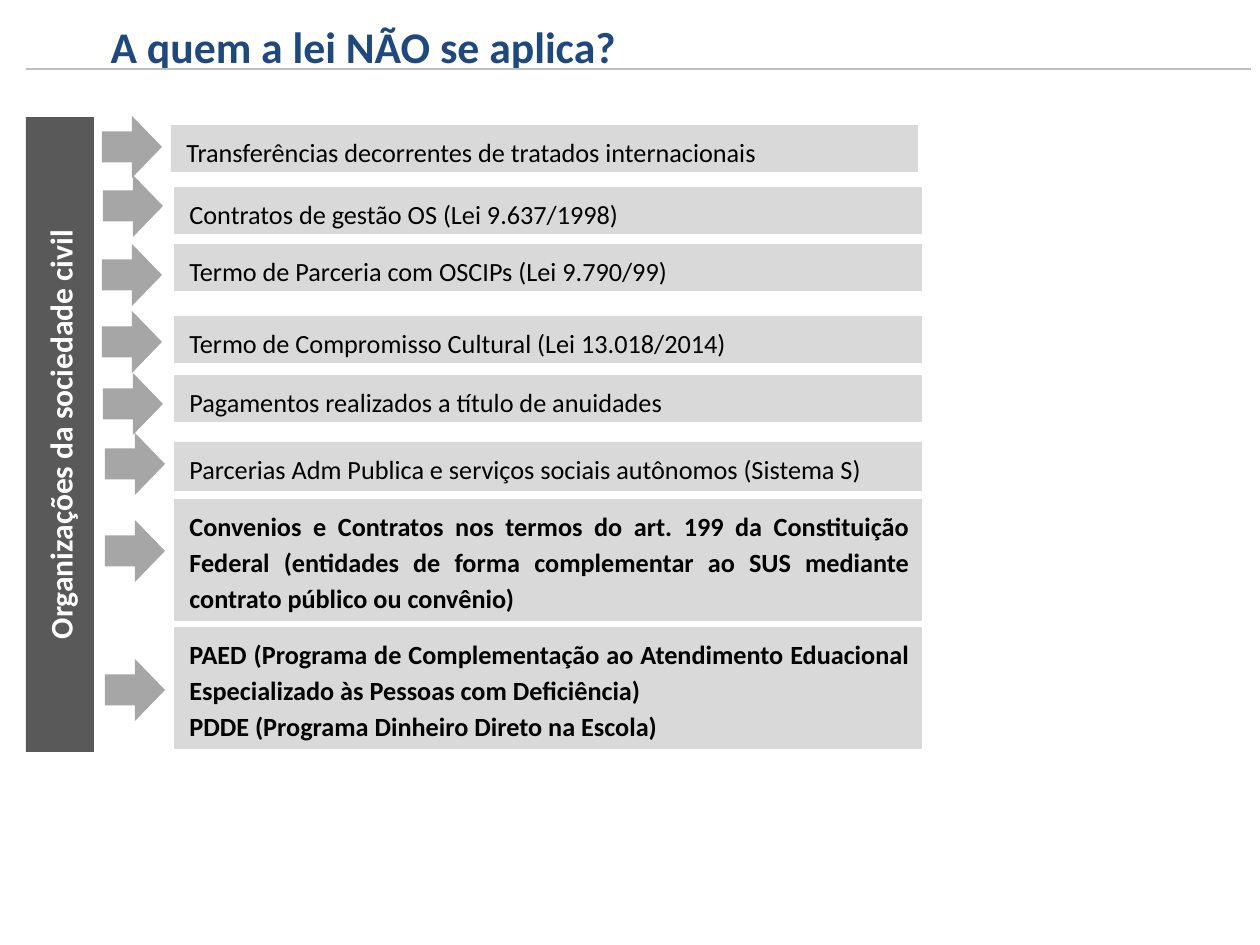
from lxml.etree import SubElement
from pptx import Presentation
from pptx.dml.color import RGBColor
from pptx.enum.shapes import MSO_CONNECTOR, MSO_SHAPE
from pptx.enum.text import MSO_ANCHOR, MSO_AUTO_SIZE, PP_ALIGN
from pptx.oxml.ns import qn
from pptx.util import Emu, Pt

NAVY = RGBColor(0x1F, 0x49, 0x7D)
BLACK = RGBColor(0, 0, 0)
WHITE = RGBColor(0xFF, 0xFF, 0xFF)
DARK_GRAY = RGBColor(0x59, 0x59, 0x59)
ARROW_GRAY = RGBColor(0xA6, 0xA6, 0xA6)
RULE_GRAY = RGBColor(0xBF, 0xBF, 0xBF)
LIGHT_GRAY = RGBColor(0xD9, 0xD9, 0xD9)

FONT = "Calibri"
ARROW_SIZE = (60, 62)

ROWS = [
    ((171, 125, 747, 47), (102, 116), False,
     "Transferências decorrentes de tratados internacionais"),
    ((174, 187, 748, 47), (103, 175), False,
     "Contratos de gestão OS (Lei 9.637/1998)"),
    ((174, 244, 748, 47), (102, 244), False,
     "Termo de Parceria com OSCIPs (Lei 9.790/99)"),
    ((174, 316, 748, 47), (102, 311), False,
     "Termo de Compromisso Cultural (Lei 13.018/2014)"),
    ((174, 375, 748, 47), (103, 373), False,
     "Pagamentos realizados a título de anuidades"),
    ((174, 442, 748, 49), (105, 433), False,
     "Parcerias Adm Publica e serviços sociais autônomos (Sistema S)"),
    ((174, 499, 748, 122), (105, 520), True,
     "Convenios e Contratos nos termos do art. 199 da Constituição Federal "
     "(entidades de forma complementar ao SUS mediante contrato público ou convênio)"),
    ((174, 627, 748, 122), (105, 659), True,
     "PAED (Programa de Complementação ao Atendimento Eduacional "
     "Especializado às Pessoas com Deficiência)\n"
     "PDDE (Programa Dinheiro Direto na Escola)"),
]


def px(value):
    return Emu(round(value * 914400 / 126))


def format_text(text_frame, size, color, bold, alignment):
    for paragraph in text_frame.paragraphs:
        paragraph.alignment = alignment
        for run in paragraph.runs:
            run.font.name = FONT
            run.font.size = Pt(size)
            run.font.bold = bold
            run.font.color.rgb = color


def add_block(slide, kind, box, color):
    shape = slide.shapes.add_shape(kind, *map(px, box))
    shape.shadow.inherit = False
    shape.fill.solid()
    shape.fill.fore_color.rgb = color
    shape.line.fill.background()
    return shape


def add_heading(slide, box):
    left, top, width, height = box
    title = slide.shapes.title
    title.left, title.top, title.width, title.height = map(px, (left + 72, top, 537, height))
    text_frame = title.text_frame
    text_frame.text = "A quem a lei NÃO se aplica?"
    text_frame.word_wrap = False
    text_frame.auto_size = MSO_AUTO_SIZE.SHAPE_TO_FIT_TEXT
    text_frame.vertical_anchor = MSO_ANCHOR.TOP
    format_text(text_frame, 25, NAVY, True, PP_ALIGN.LEFT)

    rule_top = px(top + 56)
    rule = slide.shapes.add_connector(
        MSO_CONNECTOR.STRAIGHT, px(left), rule_top, px(left + width), rule_top)
    rule.line.color.rgb = RULE_GRAY
    rule.line.width = Pt(0.75)
    SubElement(rule._element.spPr, qn("a:effectLst"))


def add_sidebar(slide, box):
    sidebar = add_block(slide, MSO_SHAPE.RECTANGLE, box, DARK_GRAY)
    text_frame = sidebar.text_frame
    text_frame.text = "Organizações da sociedade civil"
    text_frame.word_wrap = True
    text_frame.vertical_anchor = MSO_ANCHOR.MIDDLE
    text_frame._txBody.bodyPr.set("vert", "vert270")
    format_text(text_frame, 18, WHITE, True, PP_ALIGN.CENTER)


def add_row(slide, box, arrow_corner, bold, text):
    add_block(slide, MSO_SHAPE.RIGHT_ARROW, arrow_corner + ARROW_SIZE, ARROW_GRAY)
    panel = add_block(slide, MSO_SHAPE.RECTANGLE, box, LIGHT_GRAY)
    text_frame = panel.text_frame
    text_frame.text = text
    text_frame.word_wrap = True
    text_frame.auto_size = MSO_AUTO_SIZE.SHAPE_TO_FIT_TEXT
    text_frame.vertical_anchor = MSO_ANCHOR.TOP
    format_text(text_frame, 15, BLACK, bold, PP_ALIGN.JUSTIFY)
    for paragraph in text_frame.paragraphs:
        paragraph.line_spacing = 1.15
        paragraph._p.get_or_add_pPr().set("marL", str(px(3)))


def main():
    presentation = Presentation()
    presentation.slide_width = px(1260)
    presentation.slide_height = px(945)
    slide = presentation.slides.add_slide(presentation.slide_layouts[5])
    add_heading(slide, (26, 13, 1225, 66))
    add_sidebar(slide, (26, 117, 68, 635))
    for row in ROWS:
        add_row(slide, *row)
    presentation.save("out.pptx")


if __name__ == "__main__":
    main()
